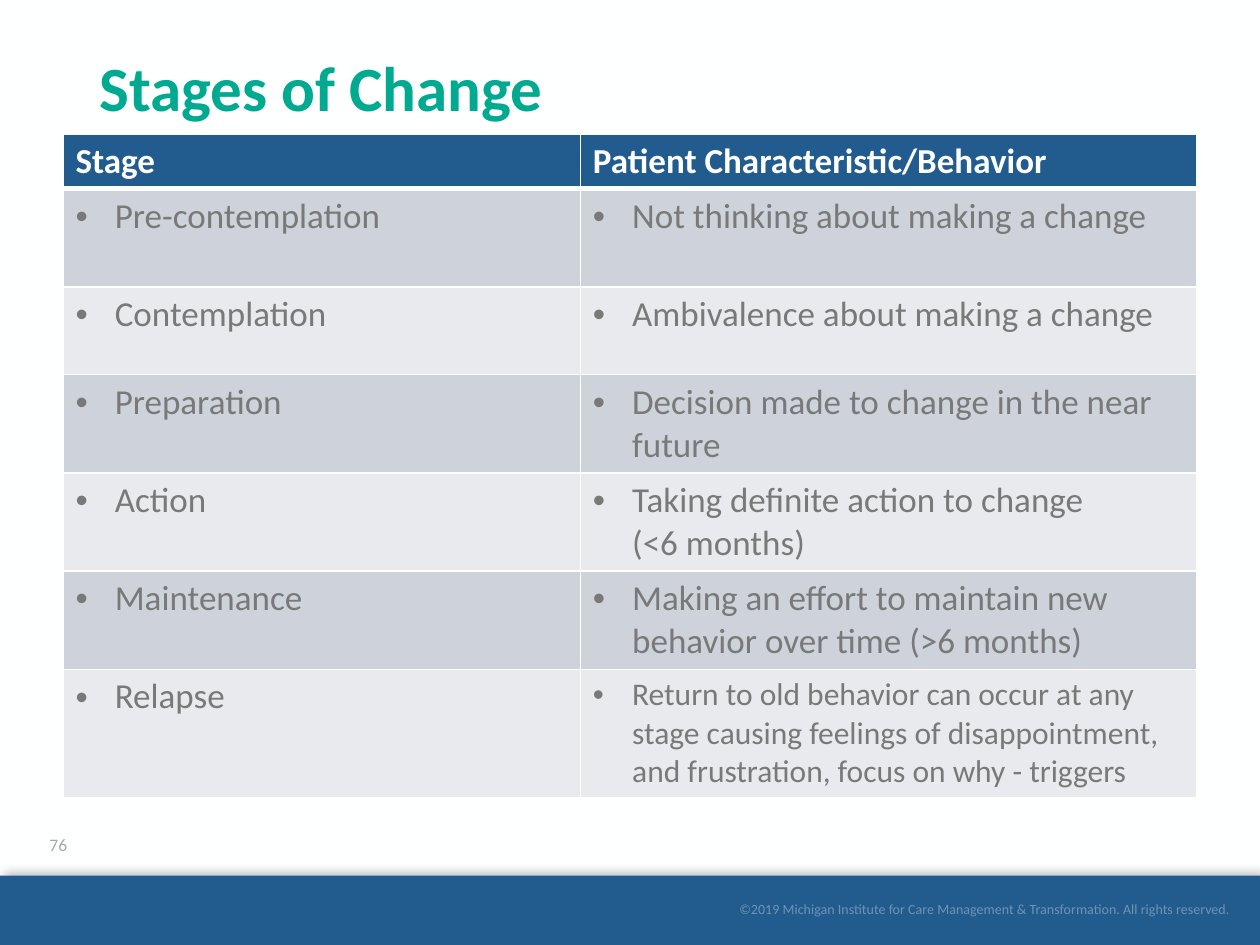
import pptx
import pptx.dml.color
import pptx.enum.shapes
import pptx.enum.text
import pptx.oxml
import pptx.oxml.ns
import pptx.util
from pptx.util import Cm

FONT = "Calibri"
WHITE, BLUE, GREEN, GRAY, PALE_GRAY = "FEFFFF", "225B8D", "00AA90", "797979", "A8A8A8"
BANDS = ["CDD2DB", "E8EAEE"]

TITLE = "Stages of Change"
PAGE_NUMBER = "76"
COPYRIGHT = "©2019 Michigan Institute for Care Management & Transformation. All rights reserved."
HEADINGS = ["Stage", "Patient Characteristic/Behavior"]
STAGES = [
    ("Pre-contemplation", ["Not thinking about making a change"], 20, 1.98),
    ("Contemplation", ["Ambivalence about making a change"], 20, 1.77),
    ("Preparation", ["Decision made to change in the near future"], 20, 1.98),
    ("Action", ["Taking definite action to change", "(<6 months)"], 20, 1.98),
    ("Maintenance", ["Making an effort to maintain new behavior over time (>6 months)"], 20, 1.98),
    ("Relapse", ["Return to old behavior can occur at any stage causing feelings of\u00a0disappointment, "
                 "and frustration, focus on why - triggers"], 18, 2.58),
]
COLUMN_WIDTHS = [10.43, 12.43]
HEADER_HEIGHT = 1.09
INDENT = Cm(0.79)

ALIGN = pptx.enum.text.PP_ALIGN
ANCHOR = pptx.enum.text.MSO_ANCHOR
NAMESPACE = pptx.oxml.ns.nsdecls("a")


def rgb(value):
    return pptx.dml.color.RGBColor.from_string(value)


def paint(shape, color):
    shape.fill.solid()
    shape.fill.fore_color.rgb = rgb(color)


def write(para, text, size, color, bold=False):
    span = para.add_run()
    span.text = text
    span.font.name = FONT
    span.font.size = pptx.util.Pt(size)
    span.font.bold = bold
    span.font.color.rgb = rgb(color)
    return span


def indent(para, bullet):
    properties = para._p.get_or_add_pPr()
    properties.set("marL", str(INDENT))
    properties.set("indent", str(-INDENT if bullet else 0))
    if bullet:
        for markup in ('<a:buFont {} typeface="Arial"/>', '<a:buChar {} char="•"/>'):
            properties.append(pptx.oxml.parse_xml(markup.format(NAMESPACE)))


def add_borders(cell, bottom):
    properties = cell._tc.get_or_add_tcPr()
    for place, (side, width) in enumerate([("L", 1), ("R", 1), ("T", 1), ("B", bottom)]):
        line = pptx.oxml.parse_xml(
            f'<a:ln{side} {NAMESPACE} w="{pptx.util.Pt(width)}"><a:solidFill>'
            f'<a:srgbClr val="{WHITE}"/></a:solidFill></a:ln{side}>')
        properties.insert(place, line)


def fill_cell(cell, lines, size, color, background, header=False):
    paint(cell, background)
    add_borders(cell, 3 if header else 1)
    for number, line in enumerate(lines):
        para = cell.text_frame.add_paragraph() if number else cell.text_frame.paragraphs[0]
        if not header:
            indent(para, bullet=number == 0)
        write(para, line, size, color, header)


def add_label(page, area, text, size, color, align, left_inset):
    box = page.shapes.add_textbox(*map(Cm, area))
    frame = box.text_frame
    frame.word_wrap = True
    frame.vertical_anchor = ANCHOR.MIDDLE
    frame.margin_left, frame.margin_right = Cm(left_inset), 0
    para = frame.paragraphs[0]
    para.alignment = align
    return write(para, text, size, color)


def add_title(page):
    title = page.shapes.title
    title.left, title.top, title.width, title.height = map(Cm, (1.75, 1.02, 21.9, 3.68))
    title.text_frame.vertical_anchor = ANCHOR.TOP
    para = title.text_frame.paragraphs[0]
    para.alignment = ALIGN.LEFT
    para.line_spacing = 0.9
    write(para, TITLE, 36, GREEN, bold=True)


def add_footer(page):
    bar = page.shapes.add_shape(pptx.enum.shapes.MSO_SHAPE.RECTANGLE, 0, Cm(17.65), Cm(25.4), Cm(1.4))
    paint(bar, BLUE)
    bar.line.fill.background()
    bar._element.spPr.append(pptx.oxml.parse_xml(
        f'<a:effectLst {NAMESPACE}><a:outerShdw blurRad="{pptx.util.Pt(6)}" dist="{pptx.util.Pt(3)}" '
        'dir="18900000" rotWithShape="0"><a:srgbClr val="000000"><a:alpha val="25000"/>'
        '</a:srgbClr></a:outerShdw></a:effectLst>'))
    notice = add_label(page, (12.57, 17.98, 12.24, 0.69), COPYRIGHT, 8, WHITE, ALIGN.RIGHT, 0.25)
    color = notice._r.rPr.find(".//" + pptx.oxml.ns.qn("a:srgbClr"))
    color.append(pptx.oxml.parse_xml(f'<a:alpha {NAMESPACE} val="35000"/>'))
    add_label(page, (0.64, 16.51, 1.07, 1.02), PAGE_NUMBER, 10, PALE_GRAY, ALIGN.CENTER, 0)


def add_stage_table(page):
    heights = [HEADER_HEIGHT] + [stage[-1] for stage in STAGES]
    table = page.shapes.add_table(
        len(heights), len(COLUMN_WIDTHS), Cm(1.27), Cm(2.7),
        Cm(sum(COLUMN_WIDTHS)), Cm(sum(heights))).table
    for column, width in zip(table.columns, COLUMN_WIDTHS):
        column.width = Cm(width)
    for row, height in zip(table.rows, heights):
        row.height = Cm(height)
    for column, heading in enumerate(HEADINGS):
        fill_cell(table.cell(0, column), [heading], 20, WHITE, BLUE, header=True)
    for number, (stage, behavior, size, _) in enumerate(STAGES):
        band = BANDS[number % 2]
        fill_cell(table.cell(number + 1, 0), [stage], 20, GRAY, band)
        fill_cell(table.cell(number + 1, 1), behavior, size, GRAY, band)


def main():
    deck = pptx.Presentation()
    deck.slide_width, deck.slide_height = Cm(25.4), Cm(19.05)
    page = deck.slides.add_slide(deck.slide_layouts[5])
    paint(page.background, WHITE)
    add_footer(page)
    add_title(page)
    add_stage_table(page)
    deck.save("out.pptx")


if __name__ == "__main__":
    main()
